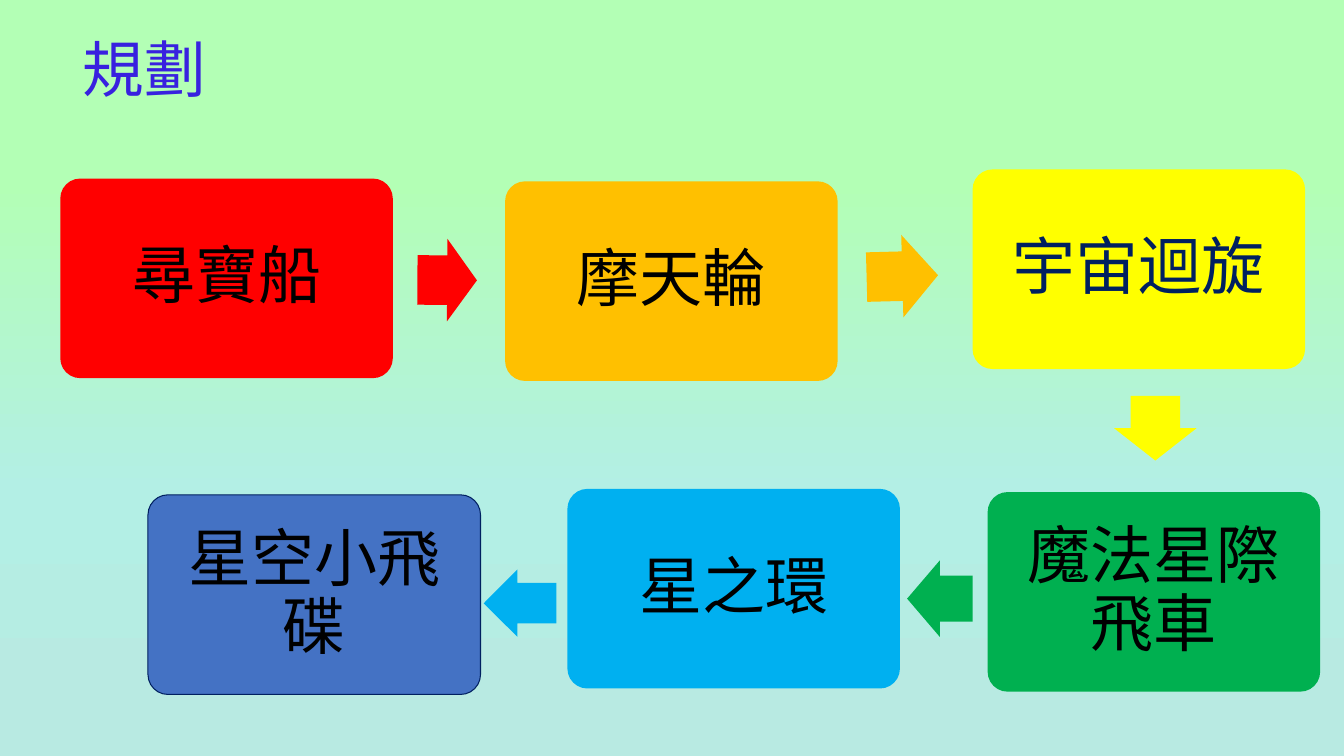
"""Build the ride plan slide: six rides in order, joined by block arrows."""
from copy import deepcopy

from pptx import Presentation
from pptx.dml.color import RGBColor
from pptx.enum.shapes import MSO_SHAPE
from pptx.enum.text import MSO_ANCHOR, PP_ALIGN
from pptx.util import Cm, Pt

COLORS = {
    "red": "FF0000", "orange": "FFC000", "yellow": "FFFF00",
    "green": "00B050", "sky": "00B0F0", "blue": "4472C4",
    "navy": "002060", "black": "000000", "title": "3821DF",
}
BACKGROUND_STOPS = [(0.24, "B3FFB5"), (0.65, "B3EFE5"), (0.94, "B8EAE2")]
BOX_WIDTH, BOX_HEIGHT = 8.38, 5.03
RIDES = [
    ("尋寶船", 1.52, 4.5, "red", "black", None),
    ("摩天輪", 12.73, 4.57, "orange", "black", None),
    ("宇宙迴旋", 24.51, 4.27, "yellow", "navy", None),
    ("魔法星際飛車", 24.89, 12.4, "green", "black", None),
    ("星之環", 14.3, 12.32, "sky", "black", None),
    ("星空小飛碟", 3.73, 12.47, "blue", "black", "navy"),
]
ARROWS = [
    (10.52, 6.02, 1.5, 2.08, 0.4, "red"),
    (21.84, 5.92, 1.8, 2.08, 358.5, "orange"),
    (28.3, 9.75, 1.63, 2.08, 90, "yellow"),
    (22.86, 14.12, 1.65, 1.93, 180, "green"),
    (12.19, 14.35, 1.83, 1.7, 179.9, "sky"),
]


def color(name):
    """Return the named colour."""
    return RGBColor.from_string(COLORS[name])


def set_background(slide):
    """Fill the background with a vertical three-stop gradient."""
    fill = slide.background.fill
    fill.gradient()
    fill.gradient_angle = 270
    first_stop = slide.element.xpath(".//p:bg//a:gs")[0]
    first_stop.addnext(deepcopy(first_stop))
    for stop, (position, value) in zip(fill.gradient_stops, BACKGROUND_STOPS):
        stop.position = position
        stop.color.rgb = RGBColor.from_string(value)


def format_paragraph(paragraph, alignment, font_name, size, color_name):
    """Set the alignment, spacing and font of a paragraph."""
    paragraph.alignment = alignment
    paragraph.line_spacing = 0.9
    paragraph.font.name = font_name
    paragraph.font.size = Pt(size)
    paragraph.font.color.rgb = color(color_name)


def set_title(slide, text):
    """Place and format the slide title."""
    title = slide.shapes.title
    title.left, title.top, title.width, title.height = Cm(1.83), Cm(0), Cm(29.21), Cm(3.68)
    title.text_frame.text = text
    title.text_frame.vertical_anchor = MSO_ANCHOR.MIDDLE
    format_paragraph(title.text_frame.paragraphs[0], PP_ALIGN.LEFT, "Noto Sans CJK JP", 44, "title")


def add_block(slide, kind, left, top, width, height, fill_name):
    """Add a flat filled shape without an outline."""
    shape = slide.shapes.add_shape(kind, Cm(left), Cm(top), Cm(width), Cm(height))
    shape.shadow.inherit = False
    shape.fill.solid()
    shape.fill.fore_color.rgb = color(fill_name)
    shape.line.fill.background()
    return shape


def add_ride(slide, name, left, top, fill_name, text_color, line_color):
    """Add a rounded box naming one ride."""
    box = add_block(slide, MSO_SHAPE.ROUNDED_RECTANGLE, left, top, BOX_WIDTH, BOX_HEIGHT, fill_name)
    box.adjustments[0] = 0.1
    if line_color:
        box.line.color.rgb = color(line_color)
        box.line.width = Pt(0.75)
    frame = box.text_frame
    frame.word_wrap = True
    frame.vertical_anchor = MSO_ANCHOR.MIDDLE
    frame.margin_left = frame.margin_right = Cm(0.63)
    frame.margin_top = frame.margin_bottom = Cm(0.63)
    frame.text = name
    format_paragraph(frame.paragraphs[0], PP_ALIGN.CENTER, "Calibri", 45, text_color)


def add_arrow(slide, left, top, width, height, rotation, fill_name):
    """Add a block arrow leading to the next ride."""
    arrow = add_block(slide, MSO_SHAPE.RIGHT_ARROW, left, top, width, height, fill_name)
    arrow.adjustments[0] = 0.6
    arrow.adjustments[1] = 0.5
    arrow.rotation = rotation


def main():
    """Build and save the presentation."""
    presentation = Presentation()
    presentation.slide_width, presentation.slide_height = Cm(33.87), Cm(19.05)
    slide = presentation.slides.add_slide(presentation.slide_layouts[5])
    set_background(slide)
    set_title(slide, "規劃")
    for ride in RIDES:
        add_ride(slide, *ride)
    for arrow in ARROWS:
        add_arrow(slide, *arrow)
    presentation.save("out.pptx")


if __name__ == "__main__":
    main()
